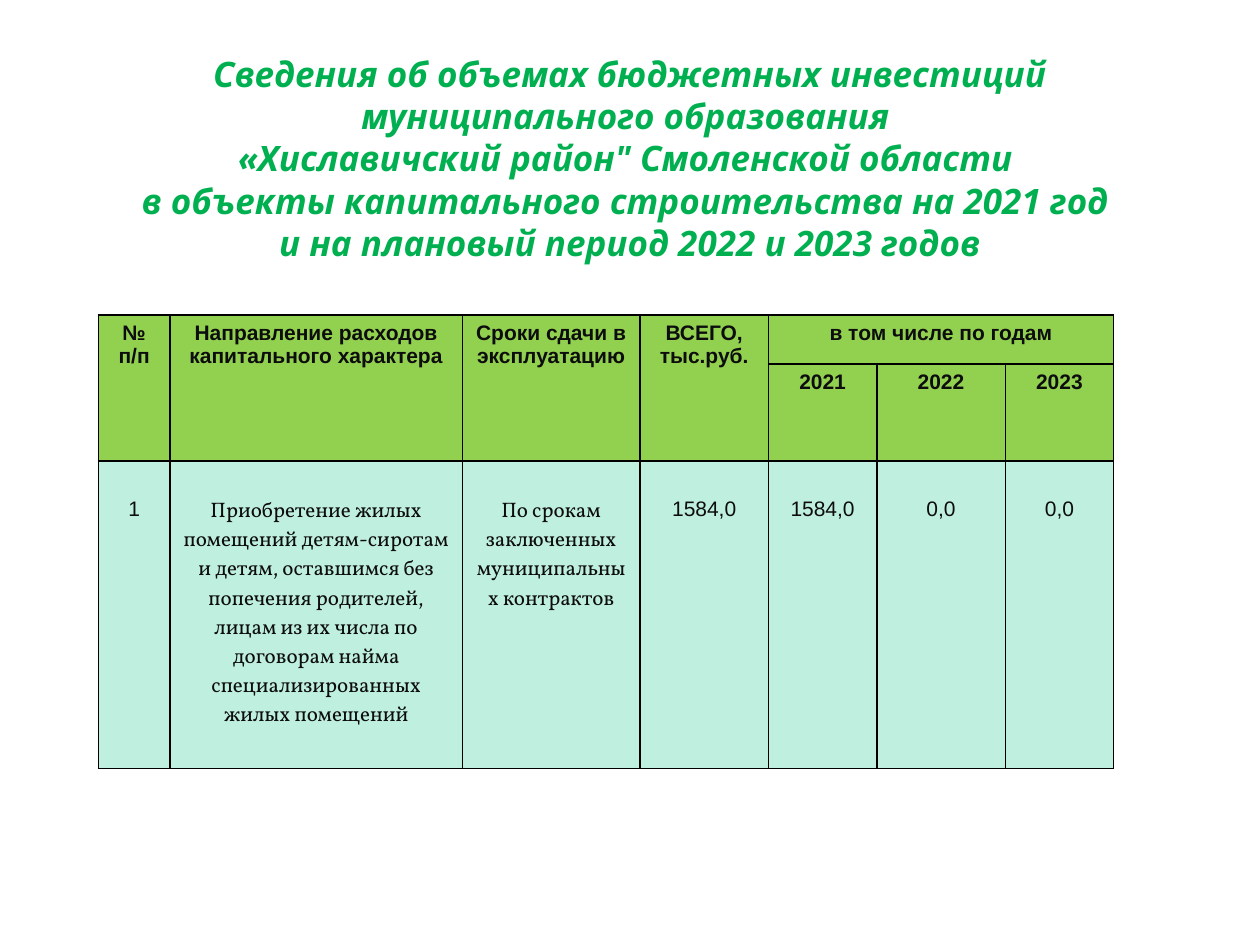
"""Build a slide with a budget investment table under a title."""
from lxml.etree import SubElement
from pptx import Presentation
from pptx.dml.color import RGBColor
from pptx.enum.text import MSO_ANCHOR, PP_ALIGN
from pptx.oxml.ns import qn
from pptx.util import Inches, Pt

COLORS = {"title": "00B050", "text": "0D0D0D", "header": "92D050",
          "body": "BFEFDF", "border": "000000"}
TITLE = [
    "Сведения об объемах бюджетных инвестиций муниципального образования ",
    "«Хиславичский район\" Смоленской области ",
    "в объекты капитального строительства на 2021 год ",
    "и на плановый период 2022 и 2023 годов",
]
ROWS = [
    ["№\nп/п", "Направление расходов капитального характера",
     "Сроки сдачи в эксплуатацию", "ВСЕГО, тыс.руб.", "в том числе по годам", "", ""],
    ["", "", "", "", "2021", "2022", "2023"],
    ["1",
     "Приобретение жилых помещений детям-сиротам и детям, оставшимся без попечения "
     "родителей, лицам из их числа по договорам найма специализированных жилых помещений",
     "По срокам заключенных муниципальных контрактов", "1584,0", "1584,0", "0,0", "0,0"],
]
COLUMN_WIDTHS = [0.57, 2.32, 1.41, 1.02, 0.86, 1.02, 0.86]
ROW_HEIGHTS = [0.39, 0.77, 2.44]
HEADER_ROWS = 2
YEARS_COLUMN = 4
SERIF_COLUMNS = (1, 2)


def style_paragraph(para, face, size, color, bold, italic=False):
    para.alignment = PP_ALIGN.CENTER
    font = para.font
    font.name, font.size, font.bold, font.italic = face, Pt(size), bold, italic
    font.color.rgb = RGBColor.from_string(COLORS[color])


def add_borders(cell):
    properties = cell._tc.get_or_add_tcPr()
    for index, side in enumerate(("a:lnL", "a:lnR", "a:lnT", "a:lnB")):
        line = properties.makeelement(qn(side), {"w": str(Pt(1))})
        fill = SubElement(line, qn("a:solidFill"))
        SubElement(fill, qn("a:srgbClr"), val=COLORS["border"])
        properties.insert(index, line)


def add_title(page):
    box = page.shapes.add_textbox(Inches(0.5), Inches(0.3), Inches(9), Inches(2.12))
    frame = box.text_frame
    frame.word_wrap = True
    frame.vertical_anchor = MSO_ANCHOR.TOP
    frame.margin_top = Inches(0.12)
    para = frame.paragraphs[0]
    para.text = "\v".join(TITLE)
    para.line_spacing = Pt(24)
    style_paragraph(para, "Noto Sans", 20, "title", True, True)


def add_budget_table(page):
    table = page.shapes.add_table(
        len(ROWS), len(COLUMN_WIDTHS), Inches(0.78), Inches(2.5),
        Inches(sum(COLUMN_WIDTHS)), Inches(sum(ROW_HEIGHTS))).table
    for column, width in zip(table.columns, COLUMN_WIDTHS):
        column.width = Inches(width)
    for row, height in zip(table.rows, ROW_HEIGHTS):
        row.height = Inches(height)
    for i, texts in enumerate(ROWS):
        is_header = i < HEADER_ROWS
        for j, text in enumerate(texts):
            cell = table.cell(i, j)
            cell.text = text
            cell.margin_top = Inches(0.05 if is_header else 0.29)
            cell.fill.solid()
            cell.fill.fore_color.rgb = RGBColor.from_string(
                COLORS["header" if is_header else "body"])
            face = "Vollkorn" if not is_header and j in SERIF_COLUMNS else "Arial"
            for para in cell.text_frame.paragraphs:
                style_paragraph(para, face, 12, "text", is_header)
            add_borders(cell)
    for j in range(YEARS_COLUMN):
        table.cell(0, j).merge(table.cell(HEADER_ROWS - 1, j))
    table.cell(0, YEARS_COLUMN).merge(table.cell(0, len(COLUMN_WIDTHS) - 1))


def main():
    deck = Presentation()
    deck.slide_width, deck.slide_height = Inches(10), Inches(7.5)
    page = deck.slides.add_slide(deck.slide_layouts[6])
    add_title(page)
    add_budget_table(page)
    deck.save("out.pptx")


if __name__ == "__main__":
    main()
